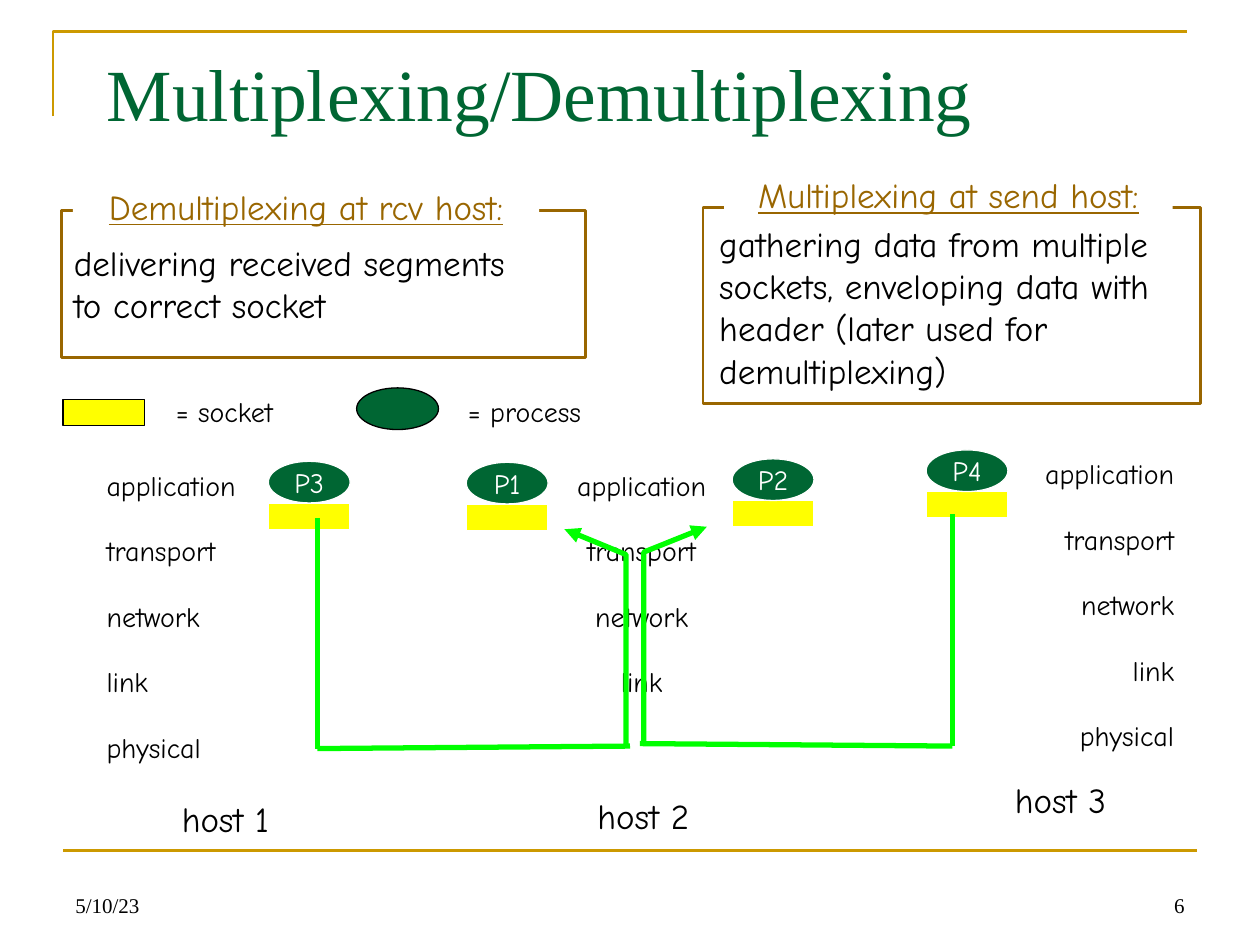
"""Build the Multiplexing/Demultiplexing slide."""
from lxml import etree
from pptx import Presentation
from pptx.dml.color import RGBColor
from pptx.enum.shapes import MSO_CONNECTOR, MSO_SHAPE
from pptx.enum.text import MSO_ANCHOR, MSO_AUTO_SIZE, PP_ALIGN
from pptx.oxml.ns import qn
from pptx.util import Cm, Pt

RECT, OVAL = MSO_SHAPE.RECTANGLE, MSO_SHAPE.OVAL
STRAIGHT = MSO_CONNECTOR.STRAIGHT
LEFT, CENTER, RIGHT = PP_ALIGN.LEFT, PP_ALIGN.CENTER, PP_ALIGN.RIGHT
TOP, MIDDLE, BOTTOM = MSO_ANCHOR.TOP, MSO_ANCHOR.MIDDLE, MSO_ANCHOR.BOTTOM
BODY_FONT, TITLE_FONT = "Comic Neue", "Times New Roman"
WHITE, BLACK, GREEN, YELLOW = "FFFFFF", "000000", "006633", "FFFF00"
GOLD, BROWN, LIME = "CC9900", "996600", "00FF00"

TITLE = "Multiplexing/Demultiplexing"
CORNER = [(1.07, 2.34), (1.07, 0.64), (23.93, 0.64)]
FOOT_RULE = [(1.27, 17.15), (24.13, 17.15)]
LAYERS = ["application", "transport", "network", "link", "physical"]
LAYER_HEIGHT = 1.32
STACKS = [
    (1.9, 9.12, 5.56, LEFT, LAYERS),
    (18.36, 8.89, 5.56, RIGHT, LAYERS),
    (9.14, 9.12, 7.59, CENTER, LAYERS[:-1]),
]
PROCESSES = [("P2", 14.76, 9.25), ("P3", 5.41, 9.3), ("P4", 18.67, 9.07), ("P1", 9.4, 9.32)]
PROCESS_SIZE, SOCKET_SIZE = (1.65, 0.84), (1.65, 0.53)
HOSTS = [
    ("host 1", (3.3, 15.95, 2.49, 1.09)),
    ("host 2", (11.66, 15.9, 2.62, 1.09)),
    ("host 3", (20.07, 15.57, 2.62, 1.09)),
]
LEGEND = [
    (RECT, (1.27, 8.05, *SOCKET_SIZE), YELLOW, "= socket", (3.18, 7.82, 2.69, 0.94)),
    (OVAL, (7.19, 7.82, *PROCESS_SIZE), GREEN, "= process", (9.09, 7.82, 2.97, 0.94)),
]
FLOWS = [
    ([(6.4, 10.44), (6.4, 15.09), (12.7, 15.04)],
     [(12.62, 15.04), (12.62, 11.18), (11.38, 10.67)]),
    ([(19.2, 10.36), (19.2, 15.04), (12.9, 14.99)],
     [(12.98, 14.96), (12.98, 11.13), (14.25, 10.62)]),
]
DEFINITIONS = [
    ("Demultiplexing at rcv host:", (1.47, 3.61, 9.4, 1.09), (1.24, 4.24, 10.57, 2.97),
     ["delivering received segments", "to correct socket"], (1.24, 4.24, 10.57, 2.97), MIDDLE),
    ("Multiplexing at send host:", (14.6, 3.38, 9.04, 1.09), (14.17, 4.19, 10.03, 3.94),
     ["gathering data from multiple", "sockets, enveloping data with",
      "header (later used for", "demultiplexing)"], (14.25, 4.37, 10.34, 3.63), TOP),
]
FOOTERS = [("5/10/23", (1.27, 17.35, 5.92, 1.27), LEFT), ("6", (18.21, 17.35, 5.92, 1.27), RIGHT)]


def color(value):
    return RGBColor.from_string(value)


def write(shape, lines, size, ink=BLACK, align=CENTER, anchor=TOP, font=BODY_FONT, underline=None):
    frame = shape.text_frame
    frame.text = "\n".join(lines)
    frame.word_wrap = True
    frame.auto_size = MSO_AUTO_SIZE.NONE
    frame.vertical_anchor = anchor
    for para in frame.paragraphs:
        para.alignment = align
        for span in para.runs:
            span.font.size, span.font.name = Pt(size), font
            span.font.color.rgb = color(ink)
            span.font.underline = underline


def add_text(page, place, lines, size, **style):
    box = page.shapes.add_textbox(*map(Cm, place))
    write(box, lines, size, **style)
    return box


def set_line(shape, ink, width):
    shape.line.color.rgb = color(ink)
    shape.line.width = Pt(width)


def add_block(page, kind, place, fill=None, line=None, width=0.75):
    block = page.shapes.add_shape(kind, *map(Cm, place))
    block.shadow.inherit = False
    if fill:
        block.fill.solid()
        block.fill.fore_color.rgb = color(fill)
    else:
        block.fill.background()
    if line:
        set_line(block, line, width)
    else:
        block.line.fill.background()
    return block


def add_line(page, start, end, ink, width):
    line = page.shapes.add_connector(STRAIGHT, *map(Cm, start + end))
    set_line(line, ink, width)
    etree.SubElement(line._element.spPr, qn("a:effectLst"))


def add_path(page, points, ink, width):
    start, *rest = [(Cm(x), Cm(y)) for x, y in points]
    builder = page.shapes.build_freeform(*start)
    builder.add_line_segments(rest, close=False)
    path = builder.convert_to_shape()
    path.shadow.inherit = False
    path.fill.background()
    set_line(path, ink, width)
    return path


def add_title(page):
    title = page.shapes.title
    title.left, title.top, title.width, title.height = map(Cm, (1.9, 0.81, 21.59, 2.11))
    write(title, [TITLE], 42, ink=GREEN, align=LEFT, anchor=MIDDLE, font=TITLE_FONT)


def add_stacks(page):
    for left, top, width, align, names in STACKS:
        for row, name in enumerate(names):
            place = (left, top + row * LAYER_HEIGHT, width, LAYER_HEIGHT)
            layer = add_block(page, RECT, place, WHITE, WHITE)
            write(layer, [name], 16, align=align, anchor=MIDDLE)


def add_processes(page):
    for name, left, top in PROCESSES:
        add_block(page, RECT, (left, top + PROCESS_SIZE[1], *SOCKET_SIZE), YELLOW, WHITE)
        process = add_block(page, OVAL, (left, top, *PROCESS_SIZE), GREEN, WHITE)
        write(process, [name], 16, ink=WHITE, anchor=MIDDLE)
        frame = process.text_frame
        frame.margin_left = frame.margin_right = frame.margin_top = frame.margin_bottom = 0


def add_flows(page):
    for route, arrival in FLOWS:
        for start, end in zip(route, route[1:]):
            add_line(page, start, end, LIME, 3)
        arrow = add_path(page, arrival, LIME, 3)
        etree.SubElement(arrow.line._get_or_add_ln(), qn("a:tailEnd"), type="triangle")


def add_definitions(page):
    for heading, heading_place, frame_place, lines, text_place, anchor in DEFINITIONS:
        add_block(page, RECT, frame_place, line=BROWN, width=1.5)
        label = add_block(page, RECT, heading_place, WHITE)
        write(label, [heading], 20, ink=BROWN, underline=True)
        add_text(page, text_place, lines, 20, align=LEFT, anchor=anchor)


def main():
    deck = Presentation()
    deck.slide_width, deck.slide_height = Cm(25.4), Cm(19.05)
    page = deck.slides.add_slide(deck.slide_layouts[5])
    add_path(page, CORNER, GOLD, 1.5)
    add_line(page, *FOOT_RULE, GOLD, 1.5)
    add_title(page)
    add_stacks(page)
    add_processes(page)
    for name, place in HOSTS:
        add_text(page, place, [name], 20)
    for kind, place, fill, meaning, text_place in LEGEND:
        add_block(page, kind, place, fill, BLACK)
        add_text(page, text_place, [meaning], 16)
    add_definitions(page)
    add_flows(page)
    for text, place, align in FOOTERS:
        add_text(page, place, [text], 12, align=align, anchor=BOTTOM, font=TITLE_FONT)
    deck.save("out.pptx")


if __name__ == "__main__":
    main()
